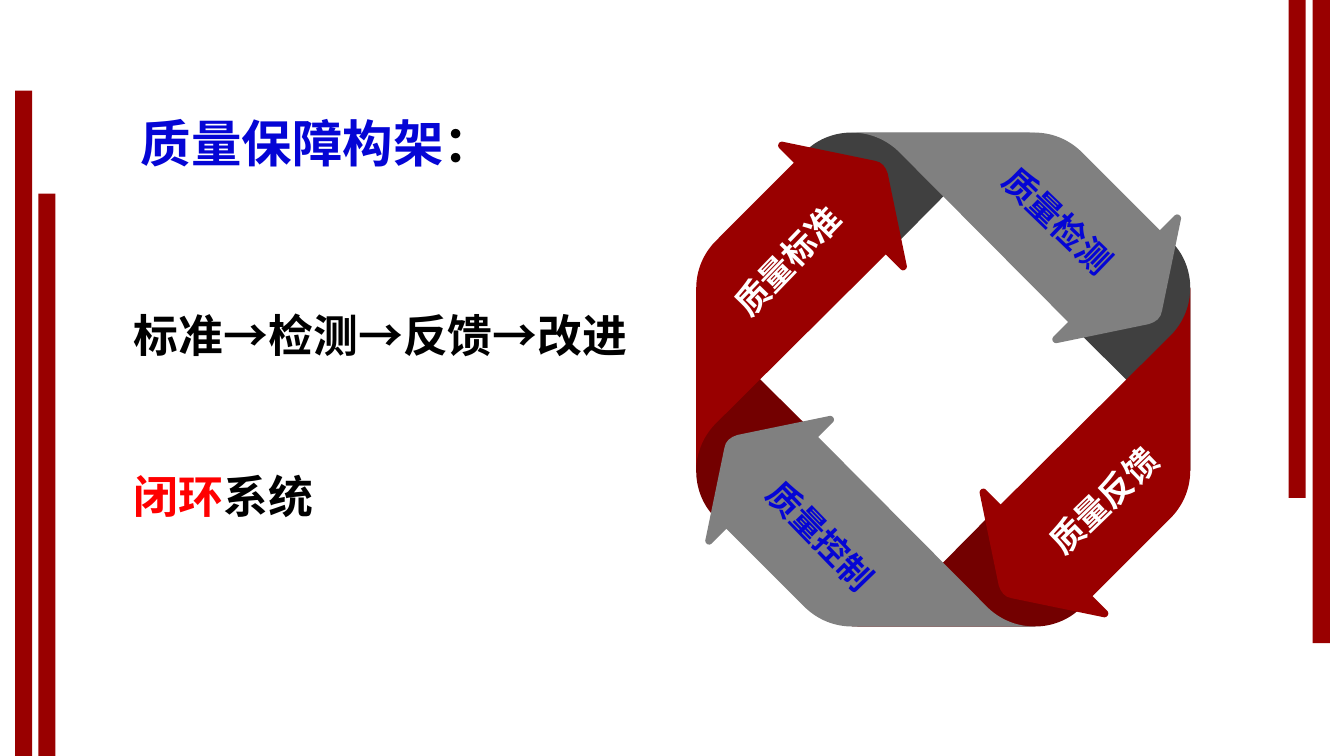
from pptx import Presentation
from pptx.dml.color import RGBColor
from pptx.enum.shapes import MSO_SHAPE
from pptx.enum.text import MSO_ANCHOR, MSO_AUTO_SIZE, PP_ALIGN
from pptx.oxml.ns import qn
from pptx.util import Inches, Pt
from lxml import etree

RECT = MSO_SHAPE.RECTANGLE
TOP, MIDDLE = MSO_ANCHOR.TOP, MSO_ANCHOR.MIDDLE
GROW = MSO_AUTO_SIZE.SHAPE_TO_FIT_TEXT
CENTER = PP_ALIGN.CENTER

DARK_RED = RGBColor(0x99, 0x00, 0x00)
FOLD_RED = RGBColor(0x73, 0x00, 0x00)
GRAY = RGBColor(0x80, 0x80, 0x80)
SEAM_GRAY = RGBColor(0x81, 0x81, 0x81)
FOLD_GRAY = RGBColor(0x40, 0x40, 0x40)
BLUE = RGBColor(0x05, 0x05, 0xD5)
RED = RGBColor(0xFF, 0x00, 0x00)
BLACK = RGBColor(0, 0, 0)
WHITE = RGBColor(0xFF, 0xFF, 0xFF)
LATIN, CJK = "Arial", "Noto Sans CJK SC"

# Outlines of the top arrow, the right fold and the left seam, in inches from
# the ring's centre. A pair is a straight step; three pairs are a Bézier step.
RING_SIZE = 4.91
ARROW = [
    [(-0.91, -2.45)],
    [(-0.74, -2.45), (-0.58, -2.39), (-0.45, -2.27)],
    [(1.24, -0.57)], [(1.09, -0.42)],
    [(1.07, -0.4), (1.09, -0.36), (1.12, -0.36)],
    [(2.04, -0.55)],
    [(2.11, -0.57), (2.16, -0.61), (2.17, -0.68)],
    [(2.36, -1.6)],
    [(2.36, -1.63), (2.32, -1.65), (2.3, -1.63)],
    [(2.15, -1.48)], [(1.36, -2.27)],
    [(1.23, -2.39), (1.07, -2.45), (0.9, -2.45)],
]
FOLD = [
    [(1.36, -0.45)], [(2.27, -1.36)],
    [(2.39, -1.24), (2.45, -1.07), (2.45, -0.91)],
    [(2.45, 0.91)],
    [(2.45, 0.74), (2.39, 0.57), (2.27, 0.45)],
]
SEAM = [[(-2.27, 1.36)], [(-1.36, 0.45)]]
# Label, its colour, offset from the centre, size, angle and anchor, clockwise from the top
LABELS = [
    ("质量检测", BLUE, (1.14, -1.58), (2.25, 0.7), 44, MIDDLE),
    ("质量反馈", WHITE, (1.57, 1.18), (2.08, 0.44), 316, TOP),
    ("质量控制", BLUE, (-1.19, 1.53), (2.08, 0.44), 46, TOP),
    ("质量标准", WHITE, (-1.57, -1.2), (2.08, 0.44), 314, TOP),
]


def paint(sp, color):
    sp.shadow.inherit = False
    sp.fill.solid()
    sp.fill.fore_color.rgb = color
    sp.line.fill.background()


def add_run(p, text, color, size, name):
    r = p.add_run()
    r.text = text
    for key, value in {"size": Pt(size), "bold": True, "name": name}.items():
        setattr(r.font, key, value)
    r.font.color.rgb = color
    ea = etree.SubElement(r.font._element, qn("a:ea"))
    ea.set("typeface", CJK)


def add_text(s, box, paragraphs, size, anchor=MIDDLE, **formats):
    """Each paragraph is a list of (text, colour, font) runs."""
    sp = s.shapes.add_textbox(*map(Inches, box))
    tf = sp.text_frame
    tf.word_wrap = True
    tf.vertical_anchor = anchor
    for i, runs in enumerate(paragraphs):
        p = tf.add_paragraph() if i else tf.paragraphs[0]
        for key, value in formats.items():
            if i or key != "space_before":
                setattr(p, key, value)
        for text, color, name in runs:
            add_run(p, text, color, size, name)
    return sp


def bend(sp, outline):
    """Join the three segments of each Bézier step into one curve."""
    track = next(sp._element.iter(qn("a:path")))
    segments = iter(track.findall(qn("a:lnTo")))
    for step in outline[1:]:
        parts = [next(segments) for _ in step]
        if len(parts) == 3:
            curve = etree.Element(qn("a:cubicBezTo"))
            parts[0].addprevious(curve)
            for part in parts:
                curve.append(part[0])
                track.remove(part)


def add_ring_part(s, center, scale, outline, quarter, color):
    points = [pt for step in outline for pt in step]
    for _ in range(quarter):
        points = [(-y, x) for x, y in points]
    cx, cy = center
    points = [(Inches(cx + scale * x), Inches(cy + scale * y)) for x, y in points]
    builder = s.shapes.build_freeform(*points[0])
    builder.add_line_segments(points[1:], close=True)
    sp = builder.convert_to_shape()
    bend(sp, outline)
    paint(sp, color)


def draw_bars(s, left, top, width, height):
    """Side bars: two rise from the bottom edge, two hang from the top edge."""
    bar = 0.17
    for x, length, hangs in ((0.15, 6.6, False), (0.38, 5.58, False),
                             (width - 0.31, 6.38, True), (width - 0.55, 4.94, True)):
        y = top if hangs else top + height - length
        paint(s.shapes.add_shape(RECT, *map(Inches, (left + x, y, bar, length))), DARK_RED)


def draw_message(s, left, top, width):
    """Heading, the process line and the conclusion."""
    sp = add_text(s, (left + 0.07, top, 4.44, 0.89),
                  [[("质量保障构架", BLUE, LATIN), ("：", BLACK, CJK)]], 36,
                  line_spacing=1.3)
    sp.text_frame.auto_size = GROW
    chain = []
    for stage in ("标准", "检测", "反馈", "改进"):
        if chain:
            chain.append(("→", BLACK, LATIN))
        chain.append((stage, BLACK, CJK))
    conclusion = [("闭环", RED, CJK), ("系统", BLACK, CJK)]
    sp = add_text(s, (left, top + 1.84, width, 2.52), [chain, conclusion], 32,
                  line_spacing=1.5, space_before=Pt(57.5))
    sp.text_frame.auto_size = GROW


def draw_ring(s, left, top, size):
    """Four folded arrows, each a quarter turn from the last."""
    scale = size / RING_SIZE
    center = (left + size / 2, top + size / 2)
    for quarter, color in enumerate((FOLD_GRAY, FOLD_RED, FOLD_RED, FOLD_GRAY)):
        add_ring_part(s, center, scale, FOLD, quarter, color)
    add_ring_part(s, center, scale, SEAM, 0, SEAM_GRAY)
    for quarter in (2, 1, 3, 0):
        add_ring_part(s, center, scale, ARROW, quarter, DARK_RED if quarter % 2 else GRAY)
    for text, color, (dx, dy), (w, h), angle, anchor in LABELS:
        box = (center[0] + scale * dx - w / 2, center[1] + scale * dy - h / 2, w, h)
        sp = add_text(s, box, [[(text, color, LATIN)]], 24, anchor, alignment=CENTER)
        sp.rotation = angle


def main():
    prs = Presentation()
    prs.slide_width, prs.slide_height = Inches(13.33), Inches(7.5)
    s = prs.slides.add_slide(prs.slide_layouts[6])
    draw_bars(s, 0, 0, 13.33, 7.5)
    draw_message(s, 1.23, 0.88, 5.21)
    draw_ring(s, 6.9, 1.31, RING_SIZE)
    prs.save("out.pptx")


if __name__ == "__main__":
    main()
